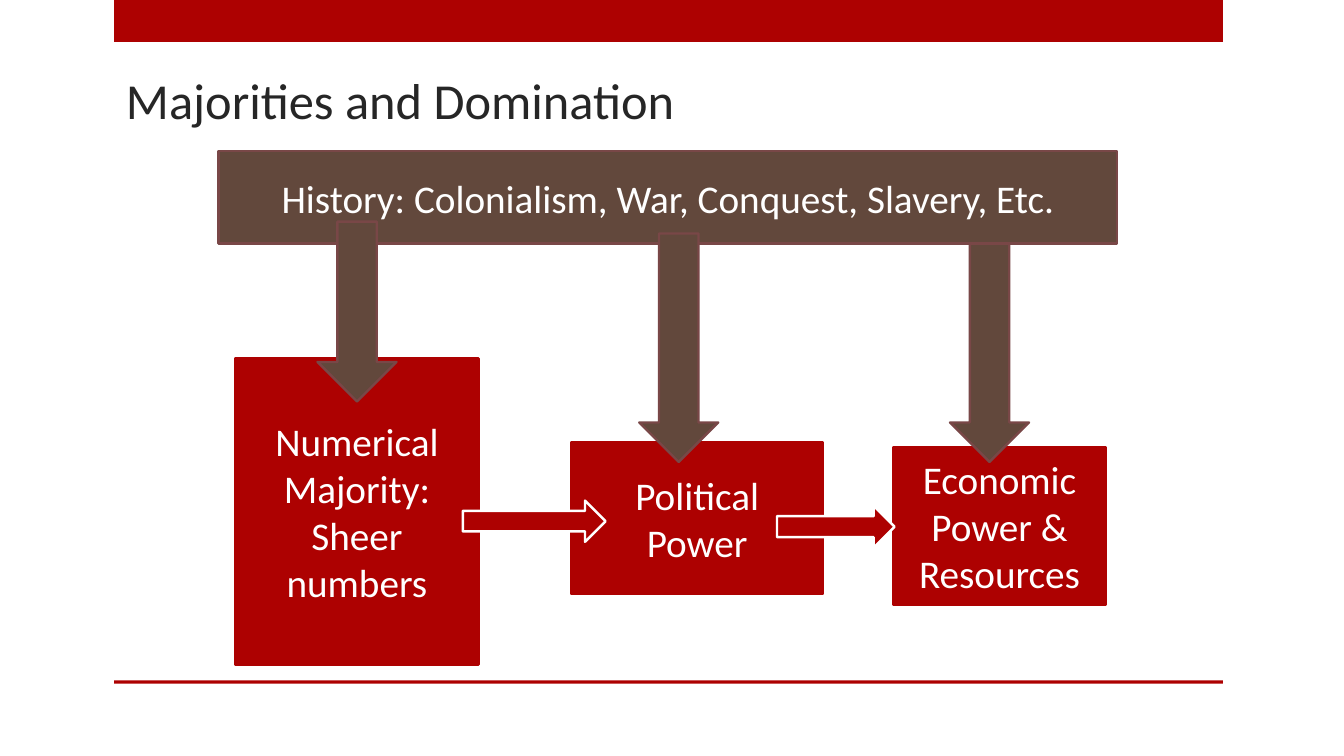
from pptx import Presentation
from pptx.dml.color import RGBColor
from pptx.enum.shapes import MSO_SHAPE as Shape
from pptx.enum.text import MSO_ANCHOR as Anchor, PP_ALIGN as Align
from pptx.util import Inches, Pt

# Grid: 160 columns by 90 rows, twelve cells to the inch
COLUMNS, ROWS = 160, 90
CELL = Inches(1) // 12

RED = RGBColor(0xAD, 0x01, 0x01)
BROWN = RGBColor(0x62, 0x48, 0x3C)
BROWN_EDGE = RGBColor(0x79, 0x47, 0x47)
WHITE = RGBColor(0xFF, 0xFF, 0xFF)
DARK = RGBColor(0x26, 0x26, 0x26)
FONT = "Calibri"


def cells(*counts):
    return [round(count * CELL) for count in counts]


def write(shape, text, size, color, align, anchor):
    frame = shape.text_frame
    frame.text = text
    frame.word_wrap = True
    frame.vertical_anchor = anchor
    paragraph = frame.paragraphs[0]
    paragraph.alignment = align
    font = paragraph.runs[0].font
    font.name, font.size, font.color.rgb = FONT, Pt(size), color


def add_figure(slide, kind, area, fill, edge=None, rotation=0):
    shape = slide.shapes.add_shape(kind, *cells(*area))
    shape.shadow.inherit = False
    shape.rotation = rotation
    shape.fill.solid()
    shape.fill.fore_color.rgb = fill
    if edge is None:
        shape.line.fill.background()
    else:
        shape.line.color.rgb = edge
        shape.line.width = Pt(1.75)
    return shape


def add_box(slide, text, area, fill, edge):
    box = add_figure(slide, Shape.RECTANGLE, area, fill, edge)
    write(box, text, 28, WHITE, Align.CENTER, Anchor.MIDDLE)


def set_title(slide, text):
    title = slide.shapes.title
    title.left, title.top, title.width, title.height = cells(13.8, 8, 131.8, 8)
    write(title, text, 36, DARK, Align.LEFT, Anchor.BOTTOM)


def main():
    presentation = Presentation()
    presentation.slide_width, presentation.slide_height = cells(COLUMNS, ROWS)
    slide = presentation.slides.add_slide(presentation.slide_layouts[5])

    # Top band, bottom rule and title
    for top, height in ((0, 5), (81, 0.4)):
        add_figure(slide, Shape.RECTANGLE, (13.6, top, 132, height), RED)
    set_title(slide, "Majorities and Domination")

    # History banner and the three forms of power
    add_box(slide, "History: Colonialism, War, Conquest, Slavery, Etc.",
            (26, 18, 107, 11), BROWN, BROWN_EDGE)
    for text, area in (
        ("Numerical Majority: Sheer numbers", (28, 42.7, 29, 36.4)),
        ("Political Power", (68, 52.7, 30, 18)),
        ("Economic Power & Resources", (106.4, 53.2, 25.2, 18.8)),
    ):
        add_box(slide, text, area, RED, RED)

    # Arrows from one form of power to the next
    add_figure(slide, Shape.RIGHT_ARROW, (55.1, 59.6, 17, 4.9), RED, WHITE)
    add_figure(slide, Shape.DOWN_ARROW, (97, 55.7, 5, 14), RED, WHITE, 270)

    # Arrows down from history
    for left, top, length in ((31.8, 32.4, 21.4), (67.2, 36.7, 27.2),
                              (104.8, 37.3, 26)):
        add_figure(slide, Shape.RIGHT_ARROW, (left, top, length, 9.4),
                   BROWN, BROWN_EDGE, 90)

    presentation.save("out.pptx")


if __name__ == "__main__":
    main()
